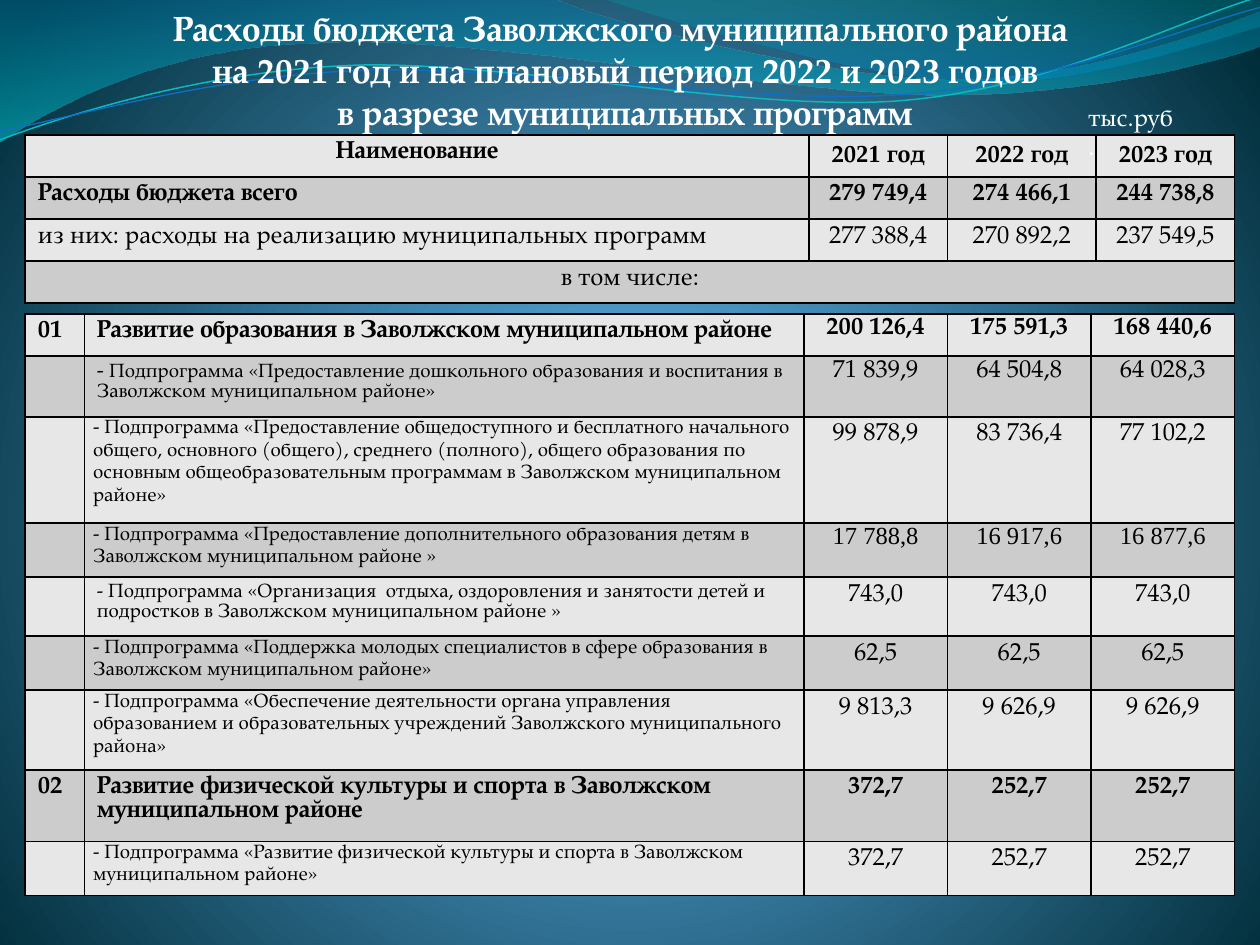
from math import cos, radians, sin

from lxml.etree import SubElement
from pptx import Presentation
from pptx.dml.color import RGBColor
from pptx.enum.text import PP_ALIGN
from pptx.oxml import parse_xml
from pptx.oxml.ns import nsdecls, qn
from pptx.util import Inches, Pt

FONT, DIGIT_FONT = "TeX Gyre Pagella", "Times New Roman"
BLACK, WHITE = RGBColor(0, 0, 0), RGBColor(255, 255, 255)
LIGHT, DARK = RGBColor(0xE7, 0xE7, 0xE7), RGBColor(0xCC, 0xCC, 0xCC)
CYAN, BLUE = RGBColor(0x0A, 0xB8, 0xBF), RGBColor(0x0F, 0x6F, 0xC6)
SKY, AZURE, NIGHT = (RGBColor.from_string(c) for c in ("4AA0D6", "4C98C7", "002C38"))
OCEAN, TURQUOISE = RGBColor(0x00, 0x74, 0xA1), RGBColor(0x00, 0xC6, 0xCF)
TEAL, LAGOON = RGBColor(0x00, 0xA1, 0xA9), RGBColor(0x00, 0x8B, 0xBF)

DOWN = '<a:lin ang="5400000" scaled="0"/>'
RADIAL = ('<a:path path="circle"><a:fillToRect l="10000" t="110000" '
          'r="10000" b="100000"/></a:path>')
TILT = -2.7

# Waves: start point, then line ends (2 numbers) and Bezier segments (6 numbers)
BROAD_WAVE = [(0, 0), (4.4, -0.01), (4.76, 0.17, 6.64, 0.63, 7.58, 0.63),
              (8.53, 0.63, 9.58, 0.26, 10, 0.09), (10.01, 0.36),
              (9.83, 0.44, 8.7, 0.76, 7.46, 0.75), (6.22, 0.75, 3.82, 0.28, 2.57, 0.34),
              (1.29, 0.36, 0.46, 0.83, -0.01, 1.13)]
RIGHT_WAVE = [(4.79, -0.01), (5.09, 0.11, 6.82, 0.62, 7.69, 0.65),
              (8.56, 0.69, 9.61, 0.32, 10, 0.21), (10, 0)]
CYAN_LINE = [(0, 1.11), (0.48, 0.93, 1.58, 0.57, 2.77, 0.52),
             (3.95, 0.47, 5.93, 0.89, 7.13, 0.8), (8.33, 0.71, 9.38, 0.15, 9.98, -0.02)]
BLUE_LINE = [(0, 1.04), (0.47, 0.96, 1.64, 0.61, 2.83, 0.56),
             (4.03, 0.51, 5.97, 0.84, 7.17, 0.75), (8.36, 0.67, 9.41, 0.21, 10, 0.06)]

# A bar switches between the text font and the digit font
TITLE = ["Расходы бюджета Заволжского муниципального района ",
         "на 20|21| год и на плановый период 202|2| и 202|3| годов",
         "в разрезе муниципальных программ"]
TOTALS = [
    ["Наименование", "20|21| год", "202|2| год", "202|3| год"],
    ["Расходы бюджета всего", "279 749,4", "274 466,1", "244 738,8"],
    ["из них: расходы на реализацию муниципальных программ",
     "277 388,4", "270 892,2", "237 549,5"],
    ["в том числе:", "", "", ""],
]
PROGRAMS = [
    ["01", "Развитие образования в Заволжском муниципальном районе",
     "200 126,4", "175 591,3", "168 440,6"],
    ["", "- ||Подпрограмма «Предоставление дошкольного образования и воспитания в "
     "Заволжском муниципальном районе»", "71 839,9", "64 504,8", "64 028,3"],
    ["", "- Подпрограмма «Предоставление общедоступного и бесплатного начального общего, "
     "основного (общего), среднего (полного), общего образования по основным "
     "общеобразовательным программам в Заволжском муниципальном районе»",
     "99 878,9", "83 736,4", "77 102,2"],
    ["", "- Подпрограмма «Предоставление дополнительного образования детям в Заволжском "
     "муниципальном районе »", "|17 788,8", "|16 917,6", "|16 877,6"],
    ["", "- Подпрограмма «Организация  отдыха, оздоровления и занятости детей и "
     "подростков в Заволжском муниципальном районе »", "743,0", "743,0", "743,0"],
    ["", "- Подпрограмма «Поддержка молодых специалистов в сфере образования в "
     "Заволжском муниципальном районе»", "62,5", "62,5", "62,5"],
    ["", "- Подпрограмма «Обеспечение деятельности органа управления образованием и "
     "образовательных учреждений Заволжского муниципального района»",
     "9 813,3", "9 626,9", "9 626,9"],
    ["02", "Развитие физической культуры и спорта в Заволжском муниципальном районе",
     "372,7", "252,7", "252,7"],
    ["", "- Подпрограмма «Развитие физической культуры и спорта в Заволжском "
     "муниципальном районе»", "372,7", "252,7", "252,7"],
]
PROGRAM_HEIGHTS = [0.24, 0.3, 0.52, 0.43, 0.41, 0.43, 0.43, 0.4, 0.43]
TIGHT_NAMES, TIGHT_VALUES, LOOSE_VALUES = {2, 3, 5, 6, 8}, {0, 1, 3}, {0, 1}


def set_gradient(element, stops, direction):
    """Swap the first solid fill under element for (position, colour, alpha) stops."""
    gs = "".join(f'<a:gs pos="{pos * 1000}"><a:srgbClr val="{color}">'
                 f'<a:alpha val="{alpha * 1000}"/></a:srgbClr></a:gs>'
                 for pos, color, alpha in stops)
    solid = element.find(".//" + qn("a:solidFill"))
    solid.getparent().replace(solid, parse_xml(
        f'<a:gradFill {nsdecls("a")} rotWithShape="1"><a:gsLst>{gs}</a:gsLst>'
        f'{direction}</a:gradFill>'))


def turn(point, center, degrees):
    a, dx, dy = radians(degrees), point[0] - center[0], point[1] - center[1]
    return (center[0] + dx * cos(a) - dy * sin(a), center[1] + dx * sin(a) + dy * cos(a))


def add_wave(s, segments, closed, center=(0, 0), tilt=0):
    """Freeform whose six-number segments become cubic curves."""
    points = [turn(seg[i:i + 2], center, -tilt)
              for seg in segments for i in range(0, len(seg), 2)]
    first, *rest = [(x * 1000, y * 1000) for x, y in points]
    builder = s.shapes.build_freeform(*first, scale=Inches(1) / 1000)
    builder.add_line_segments(rest, close=closed)
    sp = builder.convert_to_shape()
    sp.shadow.inherit = False
    sp.rotation = tilt % 360
    lines = iter(sp._element.findall(".//" + qn("a:lnTo")))
    for seg in segments[1:]:
        node = next(lines)
        if len(seg) == 6:
            node.tag = qn("a:cubicBezTo")
            for extra in (next(lines), next(lines)):
                node.append(extra[0])
                extra.getparent().remove(extra)
    return sp


def add_band(s, segments, stops):
    sp = add_wave(s, segments, True)
    sp.line.fill.background()
    sp.fill.solid()
    set_gradient(sp._element.spPr, stops, DOWN)


def add_curve(s, segments, center, color, width):
    sp = add_wave(s, segments, False, center, TILT)
    sp.fill.background()
    sp.line.color.rgb = color
    sp.line.width = Pt(width)


def write(p, text, size, color=BLACK, bold=False, centered=False, spacing=None):
    p.font.size, p.font.bold = Pt(size), bold
    p.font.color.rgb = color
    p.alignment = PP_ALIGN.CENTER if centered else PP_ALIGN.LEFT
    if spacing:
        p.line_spacing = spacing
    for i, part in enumerate(text.split("|")):
        if part:
            r = p.add_run()
            r.text = part
            f = r.font
            f.name, f.size, f.bold = DIGIT_FONT if i % 2 else FONT, Pt(size), bold
            f.color.rgb = color


def add_text(s, box, lines, size, wrap=True, **style):
    tf = s.shapes.add_textbox(*map(Inches, box)).text_frame
    tf.word_wrap = wrap
    for i, line in enumerate(lines):
        p = tf.add_paragraph() if i else tf.paragraphs[0]
        write(p, line, size, WHITE, **style)


def add_borders(cell):
    tcPr = cell._tc.get_or_add_tcPr()
    for i, side in enumerate(("lnL", "lnR", "lnT", "lnB")):
        ln = parse_xml(f'<a:{side} {nsdecls("a")} w="12700"/>')
        SubElement(SubElement(ln, qn("a:solidFill")), qn("a:srgbClr"), val=str(BLACK))
        tcPr.insert(i, ln)


def add_grid(s, top, widths, heights, rows, style):
    """Banded table; style(row, column) gives text settings and whether it is tight."""
    table = s.shapes.add_table(len(rows), len(widths), Inches(0.2), Inches(top),
                               Inches(sum(widths)), Inches(sum(heights))).table
    for column, width in zip(table.columns, widths):
        column.width = Inches(width)
    for r, (row, height) in enumerate(zip(rows, heights)):
        table.rows[r].height = Inches(height)
        for c, text in enumerate(row):
            cell = table.cell(r, c)
            cell.fill.solid()
            cell.fill.fore_color.rgb = DARK if r % 2 else LIGHT
            add_borders(cell)
            settings, tight = style(r, c)
            if tight:
                cell.margin_left = cell.margin_right = Inches(0.07)
                cell.margin_top = cell.margin_bottom = 0
            write(cell.text_frame.paragraphs[0], text, **settings)
    return table


def totals_style(r, c):
    return dict(size=14, bold=r < 2, centered=c > 0 or r in (0, 3)), False


def programs_style(r, c):
    heading = bool(PROGRAMS[r][0])
    tight = r in TIGHT_NAMES if c == 1 else c > 1 and r in TIGHT_VALUES
    loose = tight and (c == 1 or r in LOOSE_VALUES)
    return dict(size=11 if c == 1 and not heading else 14, bold=heading,
                centered=c > 1, spacing=1.15 if loose else None), tight


def main():
    prs = Presentation()
    prs.slide_width, prs.slide_height = Inches(10), Inches(7.5)
    s = prs.slides.add_slide(prs.slide_layouts[6])
    s.background.fill.solid()
    set_gradient(s._element, [(0, SKY, 100), (25, AZURE, 100), (100, NIGHT, 100)], RADIAL)
    add_band(s, BROAD_WAVE, [(0, OCEAN, 45), (100, TURQUOISE, 55)])
    add_band(s, RIGHT_WAVE, [(0, TEAL, 30), (80, LAGOON, 45)])
    add_curve(s, CYAN_LINE, (4.99, 0.58), CYAN, 0.85)
    add_curve(s, BLUE_LINE, (5, 0.59), BLUE, 0.75)
    add_text(s, (0.43, 0, 9.06, 1.11), TITLE, 20, bold=True, centered=True)
    totals = add_grid(s, 1.07, [6.22, 1.1, 1.18, 1.1], [0.31] * 4, TOTALS, totals_style)
    totals.cell(3, 0).merge(totals.cell(3, 3))
    programs = add_grid(s, 2.49, [0.47, 5.71] + [1.14] * 3, PROGRAM_HEIGHTS, PROGRAMS,
                        programs_style)
    programs.cell(1, 1).text_frame.paragraphs[0].runs[0].font.size = Pt(12)
    add_text(s, (8.54, 0.76, 0.9, 0.34), ["тыс.руб."], 14, wrap=False)
    prs.save("out.pptx")


if __name__ == "__main__":
    main()
